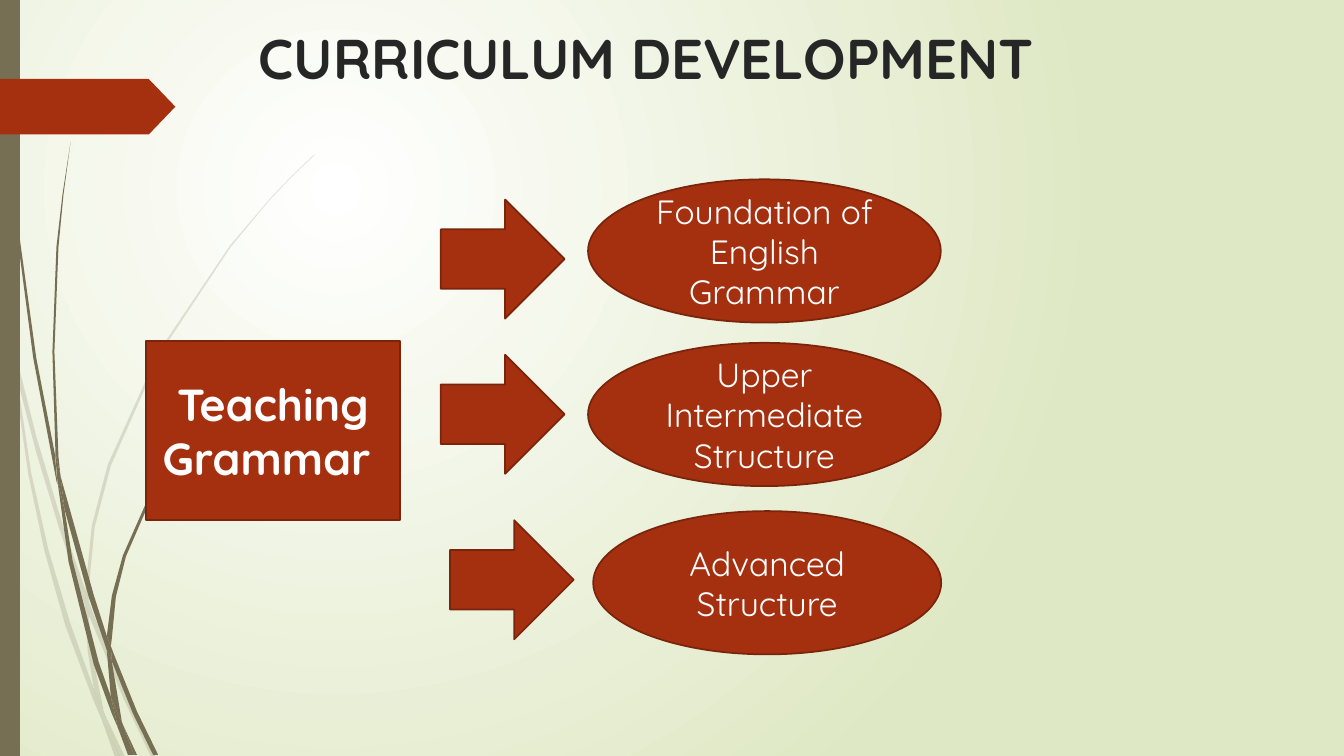
from dataclasses import dataclass

from pptx import Presentation
from pptx.dml.color import RGBColor
from pptx.enum.shapes import MSO_SHAPE
from pptx.enum.text import MSO_ANCHOR, PP_ALIGN
from pptx.oxml import parse_xml
from pptx.oxml.ns import nsdecls, qn
from pptx.shapes.autoshape import Shape
from pptx.slide import Slide
from pptx.text.text import TextFrame
from pptx.util import Cm, Pt

RECT = MSO_SHAPE.RECTANGLE
OVAL = MSO_SHAPE.OVAL
ARROW = MSO_SHAPE.RIGHT_ARROW
TAG = MSO_SHAPE.PENTAGON
MIDDLE, TOP = MSO_ANCHOR.MIDDLE, MSO_ANCHOR.TOP
CENTER, LEFT = PP_ALIGN.CENTER, PP_ALIGN.LEFT

WHITE = RGBColor(0xFF, 0xFF, 0xFF)
GREEN = RGBColor(0xDF, 0xE8, 0xC4)
OLIVE = RGBColor(0x76, 0x6F, 0x54)
RUST = RGBColor(0xA5, 0x30, 0x10)
BROWN = RGBColor(0x7A, 0x24, 0x0C)
DARK = RGBColor(0x26, 0x26, 0x26)
FONT = "Quicksand"
GRID = Cm(2.54) / 100

Edge = list[tuple[int, int]]


@dataclass
class Blade:
    edge: Edge
    faded: bool = False


@dataclass
class Box:
    kind: MSO_SHAPE
    left: float
    top: float
    width: float
    height: float
    text: str = ""
    size: int = 24
    bold: bool = False


PALE: list[Edge] = [
    [(11, 350), (9, 322), (0, 282), (0, 299), (10, 344)],
    [(58, 522), (84, 599), (85, 586), (62, 520), (36, 433), (14, 345),
     (17, 376), (36, 449)],
    [(92, 607), (88, 596), (88, 610), (123, 694), (150, 751), (155, 751),
     (127, 692)],
    [(119, 751), (124, 751), (105, 711)],
    [(93, 683), (70, 619), (48, 545), (31, 469), (17, 376), (11, 350),
     (28, 470), (44, 546), (65, 621), (92, 693), (101, 714), (99, 707)],
    [(84, 599), (87, 646), (93, 683), (96, 692), (105, 711), (103, 706),
     (91, 646), (88, 610), (88, 608)],
    [(88, 584), (94, 523), (110, 462), (160, 349), (229, 245), (268, 198),
     (290, 175), (312, 154), (312, 153), (289, 175), (268, 197), (228, 244),
     (158, 348), (107, 461), (91, 522), (85, 584), (85, 586), (88, 596)],
    [(101, 714), (114, 751), (119, 751)],
    [(88, 608), (88, 610), (88, 596), (85, 586), (84, 599)],
    [(96, 692), (93, 683), (99, 707), (101, 714), (119, 751), (105, 711)],
]

DEEP: list[Edge] = [
    [(7, 110), (17, 233), (33, 355), (56, 477), (57, 481), (55, 457),
     (55, 453), (36, 355), (19, 232), (8, 109), (5, 48), (4, 0), (3, 0),
     (4, 48)],
    [(88, 592), (106, 645), (106, 631), (93, 590), (60, 472), (64, 505)],
    [(113, 649), (110, 641), (111, 656), (132, 708), (152, 749), (157, 749),
     (136, 706)],
    [(110, 691), (98, 657), (72, 556), (64, 505), (57, 477), (68, 557),
     (93, 659), (111, 708), (117, 722), (116, 717)],
    [(60, 472), (58, 453), (54, 349), (58, 245), (63, 193), (70, 141),
     (62, 193), (56, 245), (52, 349), (55, 449)],
    [(133, 749), (136, 749), (122, 719)],
    [(57, 477), (64, 505), (60, 472), (55, 449), (55, 453)],
    [(111, 633), (115, 592), (125, 552), (158, 476), (205, 406), (231, 374),
     (245, 359), (261, 344), (260, 344), (245, 358), (231, 373), (204, 405),
     (156, 474), (122, 551), (111, 591), (106, 631), (110, 641)],
    [(117, 722), (127, 749), (131, 749)],
    [(106, 645), (110, 691), (116, 706), (122, 719), (121, 716), (111, 656),
     (109, 651)],
    [(106, 645), (109, 651), (111, 656), (110, 641), (106, 631)],
    [(116, 706), (110, 691), (116, 717), (117, 722), (130, 749), (133, 749),
     (122, 719)],
]

BLADES = [Blade(edge, True) for edge in PALE] + [Blade(edge) for edge in DEEP]

BOXES = [
    Box(RECT, 3.68, 8.6, 6.4, 4.5, "Teaching Grammar ", 32, True),
    Box(OVAL, 14.82, 4.52, 8.89, 3.61, "Foundation of English Grammar"),
    Box(OVAL, 14.82, 8.64, 8.89, 3.61, "Upper Intermediate Structure"),
    Box(OVAL, 14.95, 12.88, 8.77, 3.61, "Advanced Structure"),
    Box(ARROW, 11.11, 5.03, 3.12, 3),
    Box(ARROW, 11.11, 8.94, 3.12, 3),
    Box(ARROW, 11.34, 13.11, 3.12, 3),
]


def paint(shape: Shape, color: RGBColor) -> None:
    shape.shadow.inherit = False
    shape.fill.solid()
    shape.fill.fore_color.rgb = color
    shape.line.fill.background()


def draw_blade(slide: Slide, blade: Blade) -> None:
    pen = slide.shapes.build_freeform(*blade.edge[0], scale=GRID)
    pen.add_line_segments(blade.edge[1:], close=True)
    shape = pen.convert_to_shape()
    paint(shape, OLIVE)
    if blade.faded:
        color = shape.element.spPr.find(qn("a:solidFill"))[0]
        color.append(parse_xml(f'<a:alpha {nsdecls("a")} val="20000"/>'))


def write(frame: TextFrame, text: str, size: int, bold: bool, color: RGBColor,
          align: PP_ALIGN, anchor: MSO_ANCHOR) -> None:
    frame.word_wrap = True
    frame.vertical_anchor = anchor
    para = frame.paragraphs[0]
    para.alignment = align
    run = para.add_run()
    run.text = text
    run.font.name = FONT
    run.font.size = Pt(size)
    run.font.bold = bold
    run.font.color.rgb = color


def add_box(slide: Slide, box: Box, color: RGBColor) -> Shape:
    shape = slide.shapes.add_shape(box.kind, Cm(box.left), Cm(box.top),
                                   Cm(box.width), Cm(box.height))
    paint(shape, color)
    if box.text:
        write(shape.text_frame, box.text, box.size, box.bold, WHITE, CENTER, MIDDLE)
    return shape


def fill_back(slide: Slide) -> None:
    fill = slide.background.fill
    fill.gradient()
    for stop, color in zip(fill.gradient_stops, (WHITE, GREEN)):
        stop.color.rgb = color
    grad = slide.element.find(".//" + qn("a:gradFill"))
    grad.replace(grad.find(qn("a:lin")), parse_xml(
        f'<a:path {nsdecls("a")} path="circle"><a:fillToRect l="50000" '
        't="50000" r="100000" b="100000"/></a:path>'))


def main() -> None:
    deck = Presentation()
    deck.slide_width, deck.slide_height = Cm(33.87), Cm(19.05)
    slide = deck.slides.add_slide(deck.slide_layouts[6])
    fill_back(slide)
    for blade in BLADES:
        draw_blade(slide, blade)
    add_box(slide, Box(RECT, 0, 0, .5, 19.05), OLIVE)
    tag = add_box(slide, Box(TAG, 0, 1.99, 4.42, 1.4), RUST)
    tag.adjustments[0] = .48
    title = slide.shapes.add_textbox(Cm(6.27), Cm(.46), Cm(24.77), Cm(2.74))
    write(title.text_frame, "CURRICULUM DEVELOPMENT", 40, True, DARK, LEFT, TOP)
    for box in BOXES:
        shape = add_box(slide, box, RUST)
        shape.line.color.rgb = BROWN
        shape.line.width = Pt(1.25)
    deck.save("out.pptx")


if __name__ == "__main__":
    main()
